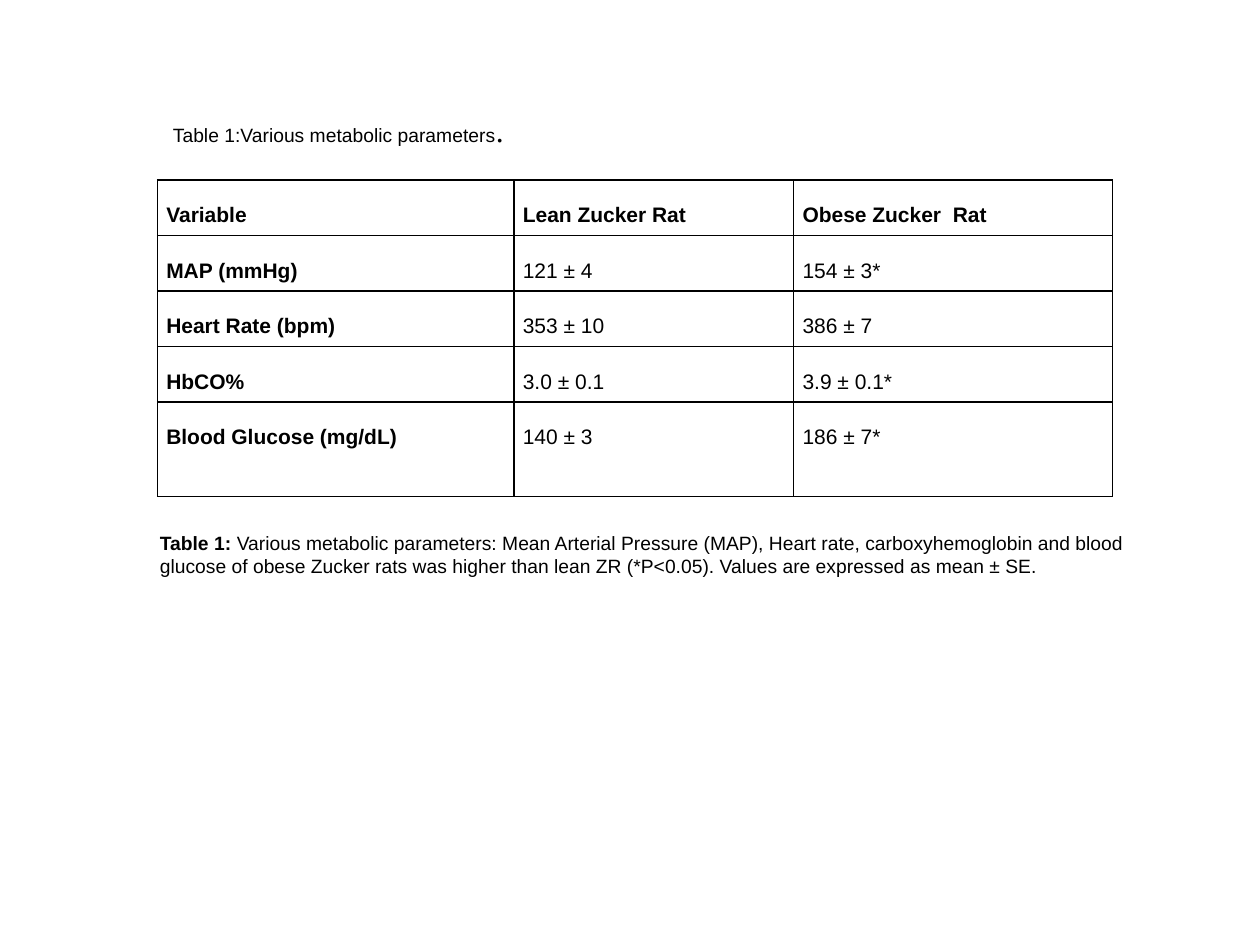
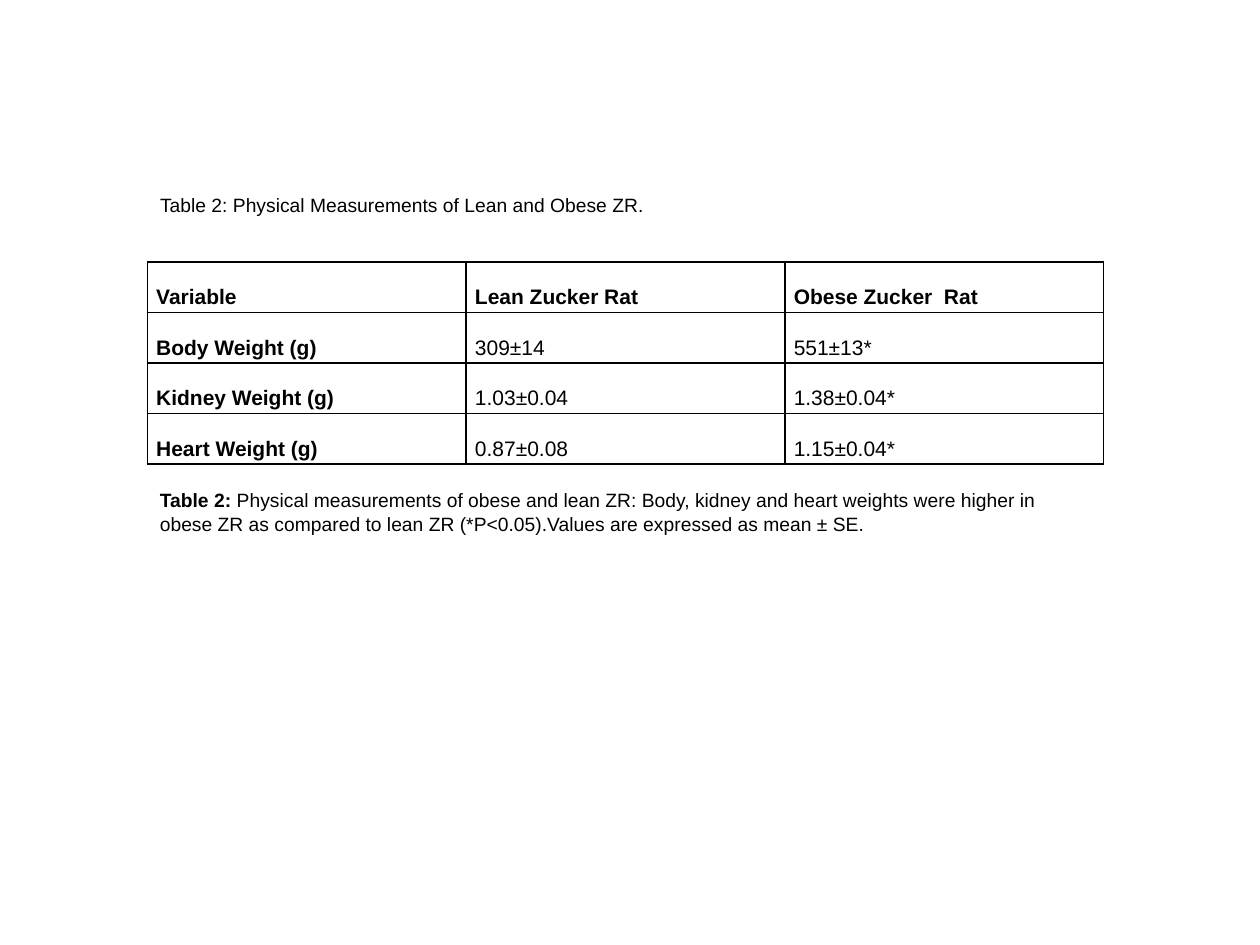
from lxml import etree
from pptx import Presentation
from pptx.dml.color import RGBColor
from pptx.enum import text
from pptx.oxml import ns
from pptx.util import Inches, Pt

BLACK = RGBColor(0x00, 0x00, 0x00)
SANS = "Arial"
SERIF = "Times New Roman"
TEXT_SIZE = 11
TABLE_SIZE = 12
BORDER_WIDTH = Pt(1)
TITLE_ONLY = 5
HEADINGS = ["Variable", "Lean Zucker Rat", "Obese Zucker  Rat"]


def add_span(para, words, size=TEXT_SIZE, bold=False, font=SANS):
    span = para.add_run()
    span.text = words
    span.font.size = Pt(size)
    span.font.bold = bold
    span.font.name = font
    span.font.color.rgb = BLACK


def place(box, left, top, width, height):
    box.left, box.top = Inches(left), Inches(top)
    box.width, box.height = Inches(width), Inches(height)


def set_title(page, area, align):
    """Move the title placeholder and return its paragraph."""
    box = page.shapes.title
    place(box, *area)
    frame = box.text_frame
    frame.word_wrap = False
    frame.auto_size = text.MSO_AUTO_SIZE.SHAPE_TO_FIT_TEXT
    frame.vertical_anchor = text.MSO_ANCHOR.MIDDLE
    para = frame.paragraphs[0]
    para.alignment = align
    return para


def add_caption(page, area, label, words):
    box = page.shapes.add_textbox(*map(Inches, area))
    frame = box.text_frame
    frame.word_wrap = True
    frame.auto_size = text.MSO_AUTO_SIZE.SHAPE_TO_FIT_TEXT
    para = frame.paragraphs[0]
    add_span(para, label, bold=True)
    add_span(para, words)


def add_borders(cell):
    properties = cell._tc.get_or_add_tcPr()
    for side in ("lnL", "lnR", "lnT", "lnB"):
        line = etree.SubElement(properties, ns.qn(f"a:{side}"), w=str(BORDER_WIDTH))
        fill = etree.SubElement(line, ns.qn("a:solidFill"))
        etree.SubElement(fill, ns.qn("a:srgbClr"), val=str(BLACK))


def fill_cell(cell, words, bold):
    add_borders(cell)
    cell.fill.background()
    cell.margin_left = cell.margin_right = Inches(0.07)
    cell.margin_top = cell.margin_bottom = 0
    para = cell.text_frame.paragraphs[0]
    para.alignment = text.PP_ALIGN.JUSTIFY
    para.line_spacing = 2.0
    add_span(para, words, TABLE_SIZE, bold)


def add_data_table(page, left, top, widths, heights, records):
    rows = [HEADINGS] + records
    area = (left, top, sum(widths), sum(heights))
    table = page.shapes.add_table(len(rows), len(widths), *map(Inches, area)).table
    table.first_row = table.horz_banding = False
    for column, width in zip(table.columns, widths):
        column.width = Inches(width)
    for row, height in zip(table.rows, heights):
        row.height = Inches(height)
    for r, record in enumerate(rows):
        for c, words in enumerate(record):
            fill_cell(table.cell(r, c), words, bold=r == 0 or c == 0)


def build_metabolic_page(deck):
    page = deck.slides.add_slide(deck.slide_layouts[TITLE_ONLY])
    para = set_title(page, (1.25, 0.83, 2.87, 0.4), text.PP_ALIGN.CENTER)
    add_span(para, "Table 1:Various metabolic parameters")
    add_span(para, ".", 18, font=SERIF)
    add_data_table(page, 1.25, 1.43, [2.83, 2.22, 2.53], [0.44] * 4 + [0.75], [
        ["MAP (mmHg)", "121 ± 4", "154 ± 3*"],
        ["Heart Rate (bpm)", "353 ± 10", "386 ± 7"],
        ["HbCO%", "3.0 ± 0.1", "3.9 ± 0.1*"],
        ["Blood Glucose (mg/dL)", "140 ± 3", "186 ± 7*"],
    ])
    add_caption(page, (1.17, 4.17, 7.92, 0.66), "Table 1: ",
                "Various metabolic parameters: Mean Arterial Pressure (MAP), "
                "Heart rate, carboxyhemoglobin and blood glucose of obese Zucker "
                "rats was higher than lean ZR (*P<0.05). "
                "Values are expressed as mean ± SE.")


def build_physical_page(deck):
    page = deck.slides.add_slide(deck.slide_layouts[TITLE_ONLY])
    para = set_title(page, (1.17, 1.48, 4.08, 0.29), text.PP_ALIGN.JUSTIFY)
    add_span(para, "Table 2: Physical Measurements of Lean and Obese ZR.")
    add_data_table(page, 1.17, 2.08, [2.53] * 3, [0.4] * 4, [
        ["Body Weight (g)", "309±14", "551±13*"],
        ["Kidney Weight (g)", "1.03±0.04", "1.38±0.04*"],
        ["Heart Weight (g)", "0.87±0.08", "1.15±0.04*"],
    ])
    add_caption(page, (1.17, 3.83, 7.58, 0.66), "Table 2:",
                " Physical measurements of obese and lean ZR: Body, kidney and "
                "heart weights were higher in obese ZR as compared to lean ZR "
                "(*P<0.05).Values are expressed as mean ± SE.")


def main():
    deck = Presentation()
    deck.slide_width, deck.slide_height = Inches(10), Inches(7.5)
    build_metabolic_page(deck)
    build_physical_page(deck)
    deck.save("out.pptx")


if __name__ == "__main__":
    main()
